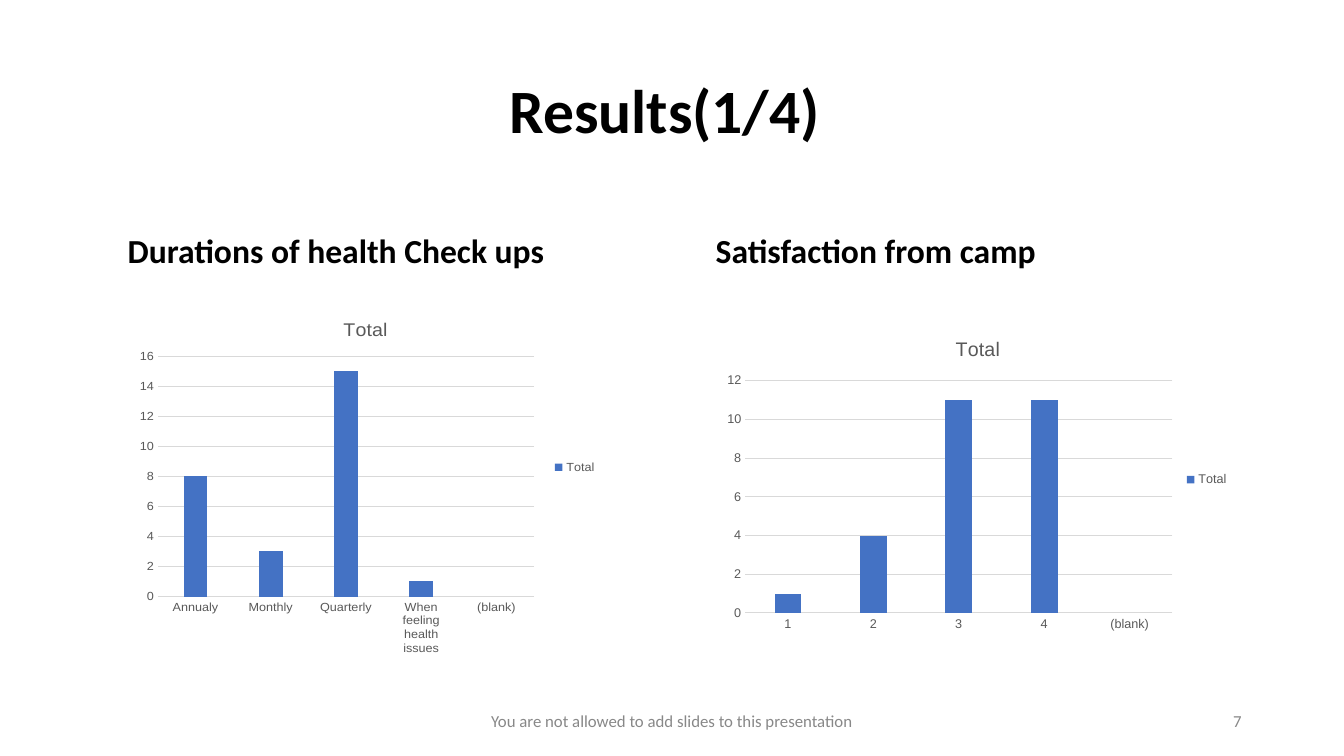
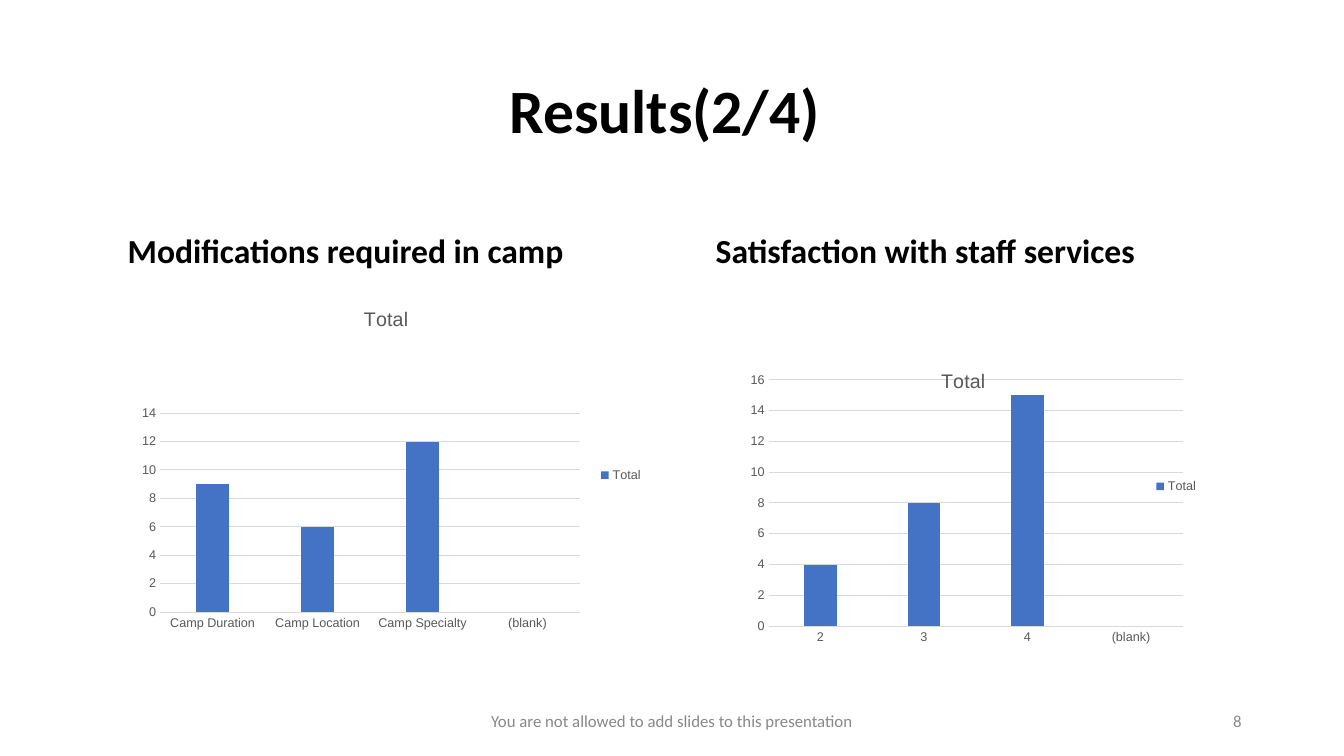
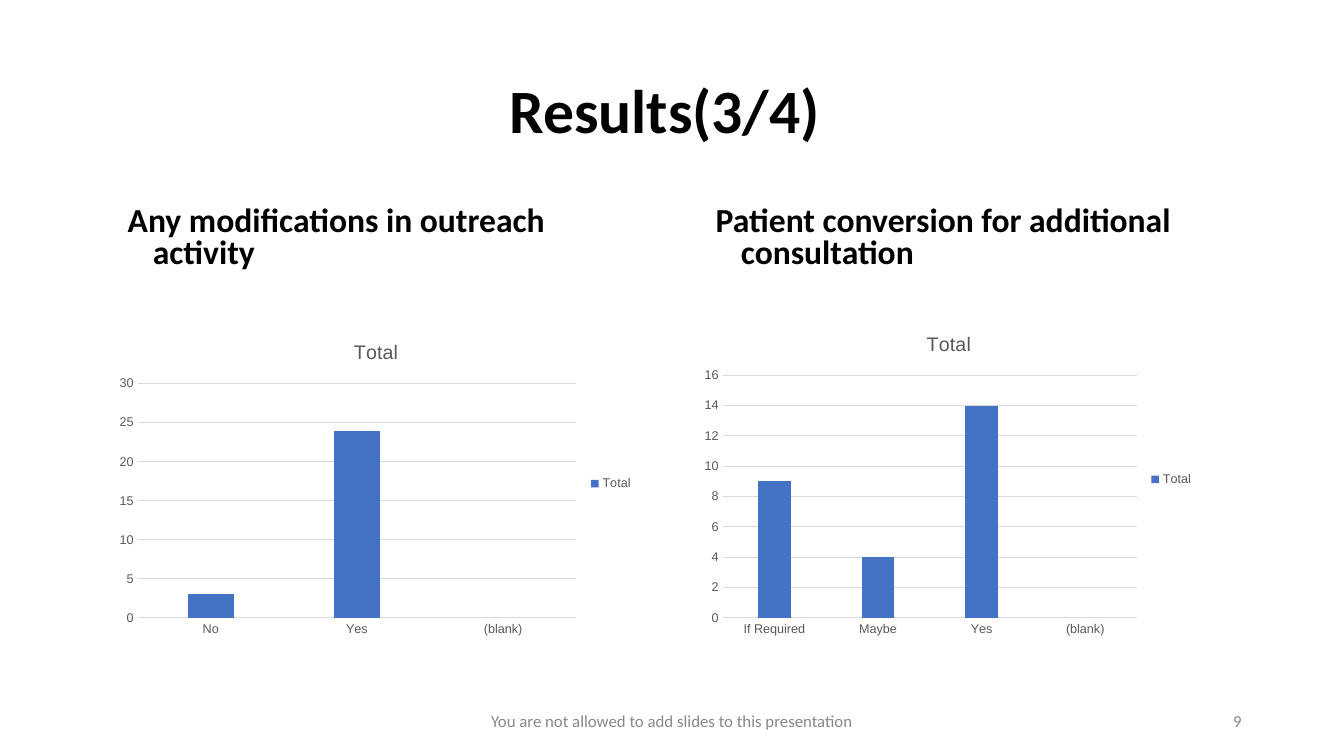
from dataclasses import dataclass
from typing import Optional

from lxml import etree
from pptx import Presentation
from pptx.chart.data import CategoryChartData
from pptx.dml.color import RGBColor
from pptx.enum.chart import XL_CHART_TYPE, XL_LEGEND_POSITION, XL_TICK_MARK
from pptx.enum.text import MSO_ANCHOR, MSO_AUTO_SIZE, PP_ALIGN
from pptx.oxml.ns import qn
from pptx.util import Pt

COLUMNS = XL_CHART_TYPE.COLUMN_CLUSTERED
LEGEND_RIGHT = XL_LEGEND_POSITION.RIGHT
NO_TICK = XL_TICK_MARK.NONE
LEFT, CENTER, RIGHT = PP_ALIGN.LEFT, PP_ALIGN.CENTER, PP_ALIGN.RIGHT
MIDDLE, BOTTOM = MSO_ANCHOR.MIDDLE, MSO_ANCHOR.BOTTOM
NO_FIT = MSO_AUTO_SIZE.NONE

Box = tuple[float, float, float, float]

# Shared look, lengths in points
BLACK, GREY, CHART_GREY, GRID, BLUE = "000000", "888888", "595959", "D9D9D9", "4472C4"
TEXT_FONT, CHART_FONT = "Calibri", "Arial"
COMPARISON_LAYOUT = 4
TITLE_BOX: Box = (66, 28.8, 828, 104.4)
HEADING_BOXES: tuple[Box, Box] = ((66, 132.4, 406, 64.8), (486, 132.4, 408, 64.8))
HEADING_IDS, CONTENT_IDS = (1, 3), (2, 4)
FOOTER_BOX: Box = (318, 500.4, 324, 28.8)
NUMBER_BOX: Box = (678, 500.4, 216, 28.8)
FOOTER = "You are not allowed to add slides to this presentation"
FIRST_NUMBER = 7


@dataclass(frozen=True)
class Panel:
    """A heading with its column chart; layouts are fractions of the chart."""
    heading: str
    box: Box
    values: dict[str, Optional[int]]
    plot: Optional[Box] = None
    title_at: Optional[tuple[float, float]] = None


@dataclass(frozen=True)
class ResultSlide:
    title: str
    panels: tuple[Panel, Panel]
    heading_spacing: float = 0.9


SLIDES = (
    ResultSlide("Results(1/4) ", (
        Panel("Durations of health Check ups", (88.6, 216, 345, 252),
              {"Annualy": 8, "Monthly": 3, "Quarterly": 15,
               "When feeling health issues": 1, "(blank)": None},
              plot=(0.07, 0.163, 0.779, 0.729)),
        Panel("Satisfaction from camp", (512, 229.7, 373, 226),
              {"1": 1, "2": 4, "3": 11, "4": 11, "(blank)": None}),
    )),
    ResultSlide("Results(2/4) ", (
        Panel("Modifications required in camp", (85, 207.4, 381.6, 264.2),
              {"Camp Duration": 9, "Camp Location": 6, "Camp Specialty": 12, "(blank)": None},
              plot=(0.077, 0.332, 0.786, 0.538)),
        Panel("Satisfaction with staff services", (491, 230.4, 372.2, 234),
              {"2": 4, "3": 8, "4": 15, "(blank)": None},
              plot=(0.156, 0.175, 0.795, 0.752), title_at=(0.48, 0.13)),
    )),
    ResultSlide("Results(3/4) ", (
        Panel("Any modifications in outreach activity", (77.8, 231.8, 381.6, 227.5),
              {"No": 3, "Yes": 24, "(blank)": None}),
        Panel("Patient conversion for additional consultation", (496, 225.4, 363.6, 234),
              {"If Required": 9, "Maybe": 4, "Yes": 14, "(blank)": None}),
    ), heading_spacing=0.8),
)


def rgb(color: str) -> RGBColor:
    return RGBColor.from_string(color)


def set_font(font, name: str, size: float, color: str, bold: bool = False) -> None:
    font.name, font.size, font.bold = name, Pt(size), bold
    font.color.rgb = rgb(color)


def set_text(sp, box: Box, text: str, size: float, color: str, align,
             anchor=MIDDLE, bold: bool = False):
    """Place a text shape, fill it and return its paragraph."""
    sp.left, sp.top, sp.width, sp.height = map(Pt, box)
    tf = sp.text_frame
    tf.text = text
    tf.word_wrap, tf.auto_size, tf.vertical_anchor = True, NO_FIT, anchor
    p = tf.paragraphs[0]
    p.alignment = align
    for r in p.runs:
        set_font(r.font, TEXT_FONT, size, color, bold)
    return p


def set_layout(parent, index: int, **settings) -> None:
    """Give a chart part a manual layout as its child at index."""
    for old in parent.findall(qn("c:layout")):
        parent.remove(old)
    layout = etree.Element(qn("c:layout"))
    manual = etree.SubElement(layout, qn("c:manualLayout"))
    for tag, value in settings.items():
        etree.SubElement(manual, qn(f"c:{tag}")).set("val", str(value))
    parent.insert(index, layout)


def add_column_chart(s, panel: Panel) -> None:
    data = CategoryChartData()
    data.categories = list(panel.values)
    data.add_series("Total", list(panel.values.values()))
    chart = s.shapes.add_chart(COLUMNS, *map(Pt, panel.box), data).chart
    set_font(chart.font, CHART_FONT, 10, BLACK)

    # Title and legend
    chart.has_title = True
    tf = chart.chart_title.text_frame
    tf.text = "Total"
    set_font(tf.paragraphs[0].runs[0].font, CHART_FONT, 14, CHART_GREY)
    chart.has_legend = True
    chart.legend.position = LEGEND_RIGHT
    chart.legend.include_in_layout = False
    set_font(chart.legend.font, CHART_FONT, 9, CHART_GREY)

    # Axes
    for axis in (chart.category_axis, chart.value_axis):
        axis.major_tick_mark = axis.minor_tick_mark = NO_TICK
        set_font(axis.tick_labels.font, CHART_FONT, 9, CHART_GREY)
    chart.value_axis.format.line.fill.background()
    chart.value_axis.has_major_gridlines = True
    for line in (chart.category_axis.format.line, chart.value_axis.major_gridlines.format.line):
        line.color.rgb = rgb(GRID)
        line.width = Pt(0.75)

    # Columns
    plot = chart.plots[0]
    plot.gap_width, plot.overlap, plot.vary_by_categories = 219, -27, False
    fill = plot.series[0].format.fill
    fill.solid()
    fill.fore_color.rgb = rgb(BLUE)

    # Manual positions
    if panel.plot:
        x, y, w, h = panel.plot
        set_layout(chart.element.find(f".//{qn('c:plotArea')}"), 0, layoutTarget="inner",
                   xMode="edge", yMode="edge", x=x, y=y, w=w, h=h)
    if panel.title_at:
        x, y = panel.title_at
        set_layout(chart.element.find(f".//{qn('c:title')}"), 1,
                   xMode="edge", yMode="edge", x=x, y=y)


def add_result_slide(prs, result: ResultSlide, number: int) -> None:
    s = prs.slides.add_slide(prs.slide_layouts[COMPARISON_LAYOUT])
    holders = {sp.placeholder_format.idx: sp for sp in s.placeholders}
    for idx in CONTENT_IDS:
        el = holders[idx].element
        el.getparent().remove(el)

    # Title
    p = set_text(s.shapes.title, TITLE_BOX, result.title, 44, BLACK, CENTER, bold=True)
    p.line_spacing = 0.9

    # Headings with hanging indent, and charts
    for idx, box, panel in zip(HEADING_IDS, HEADING_BOXES, result.panels):
        p = set_text(holders[idx], box, panel.heading, 24, BLACK, LEFT, BOTTOM, True)
        p.line_spacing, p.space_before = result.heading_spacing, Pt(10)
        pPr = p._p.get_or_add_pPr()
        pPr.set("marL", str(Pt(36)))
        pPr.set("indent", str(Pt(-18)))
        add_column_chart(s, panel)

    # Footer and slide number
    for box, text, align in ((FOOTER_BOX, FOOTER, CENTER), (NUMBER_BOX, str(number), RIGHT)):
        set_text(s.shapes.add_textbox(*map(Pt, box)), box, text, 12, GREY, align)


def main() -> None:
    prs = Presentation()
    prs.slide_width, prs.slide_height = Pt(960), Pt(540)
    for number, result in enumerate(SLIDES, FIRST_NUMBER):
        add_result_slide(prs, result, number)
    prs.save("out.pptx")


if __name__ == "__main__":
    main()
